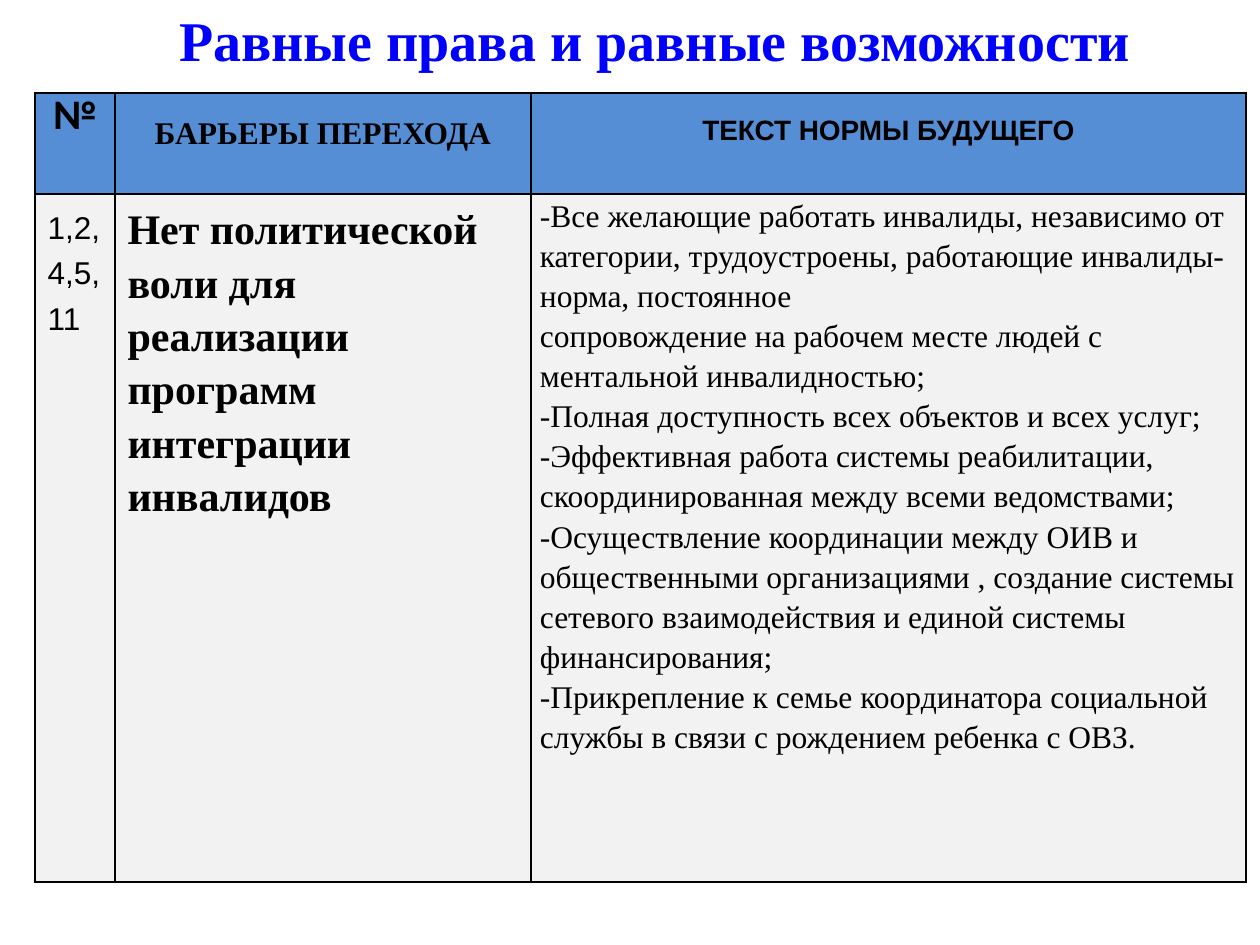
from pptx import Presentation
from pptx.dml.color import RGBColor
from pptx.enum.text import MSO_ANCHOR as Anchor, MSO_AUTO_SIZE as AutoSize, PP_ALIGN as Align
from pptx.oxml import parse_xml
from pptx.oxml.ns import nsdecls
from pptx.util import Emu, Pt

BLACK = RGBColor(0x00, 0x00, 0x00)
BLUE = RGBColor(0x00, 0x00, 0xFF)
HEADER = RGBColor(0x55, 0x8E, 0xD5)
BODY = RGBColor(0xF2, 0xF2, 0xF2)
SERIF = "Times New Roman"


def px(value):
    return Emu(round(value * 914400 / 126))


def write(frame, *lines, font=SERIF, size=18, bold=False, color=BLACK, align=Align.LEFT, spacing=1.0):
    for index, line in enumerate(lines):
        para = frame.add_paragraph() if index else frame.paragraphs[0]
        para.alignment = align
        para.line_spacing = spacing
        span = para.add_run()
        span.text = line
        span.font.name = font
        span.font.size = Pt(size)
        span.font.bold = bold
        span.font.color.rgb = color


deck = Presentation()
deck.slide_width, deck.slide_height = px(1260), px(945)
page = deck.slides.add_slide(deck.slide_layouts[5])

title = page.shapes.title
title.left, title.top, title.width, title.height = px(149), px(3), px(1012), px(72)
title.text_frame.word_wrap = True
title.text_frame.auto_size = AutoSize.NONE
title.text_frame.vertical_anchor = Anchor.MIDDLE
write(title.text_frame, "Равные права и равные возможности",
      size=32, bold=True, color=BLUE, align=Align.CENTER)

widths = [80, 416, 715]
heights = [101, 688]
table = page.shapes.add_table(2, 3, px(35), px(93), px(sum(widths)), px(sum(heights))).table
for column, width in zip(table.columns, widths):
    column.width = px(width)
for row, height in zip(table.rows, heights):
    row.height = px(height)

for row, fill in zip(table.rows, (HEADER, BODY)):
    for cell in row.cells:
        properties = cell._tc.get_or_add_tcPr()
        for side in ("lnL", "lnR", "lnT", "lnB"):
            properties.append(parse_xml(
                f'<a:{side} {nsdecls("a")} w="{Pt(1)}"><a:solidFill>'
                f'<a:srgbClr val="{BLACK}"/></a:solidFill></a:{side}>'))
        cell.fill.solid()
        cell.fill.fore_color.rgb = fill

headings = [
    ("№", "Calibri", 24, Pt(24)),
    ("БАРЬЕРЫ ПЕРЕХОДА", SERIF, 18, 1.5),
    ("ТЕКСТ НОРМЫ БУДУЩЕГО", "Arial", 16, 1.5),
]
for cell, (text, font, size, spacing) in zip(table.rows[0].cells, headings):
    write(cell.text_frame, text, font=font, size=size, bold=True, align=Align.CENTER, spacing=spacing)

numbers, barrier, norms = table.rows[1].cells
write(numbers.text_frame, "1,2,4,5,11", font="Arial", spacing=Pt(26))
write(barrier.text_frame, "Нет политической воли для реализации программ интеграции инвалидов",
      size=24, bold=True, spacing=1.15)
norms.margin_left = norms.margin_right = px(9)
norms.margin_top = norms.margin_bottom = 0
write(
    norms.text_frame,
    "-Все желающие работать инвалиды, независимо от категории, трудоустроены, "
    "работающие инвалиды-норма, постоянное",
    "сопровождение на рабочем месте людей с ментальной инвалидностью;",
    "-Полная доступность всех объектов и всех услуг;",
    "-Эффективная работа системы реабилитации, скоординированная между всеми ведомствами;",
    "-Осуществление координации между ОИВ и общественными организациями , "
    "создание системы сетевого взаимодействия и единой системы финансирования;",
    "-Прикрепление к семье координатора социальной службы в связи с рождением ребенка с ОВЗ.",
    spacing=1.15,
)

deck.save("out.pptx")
